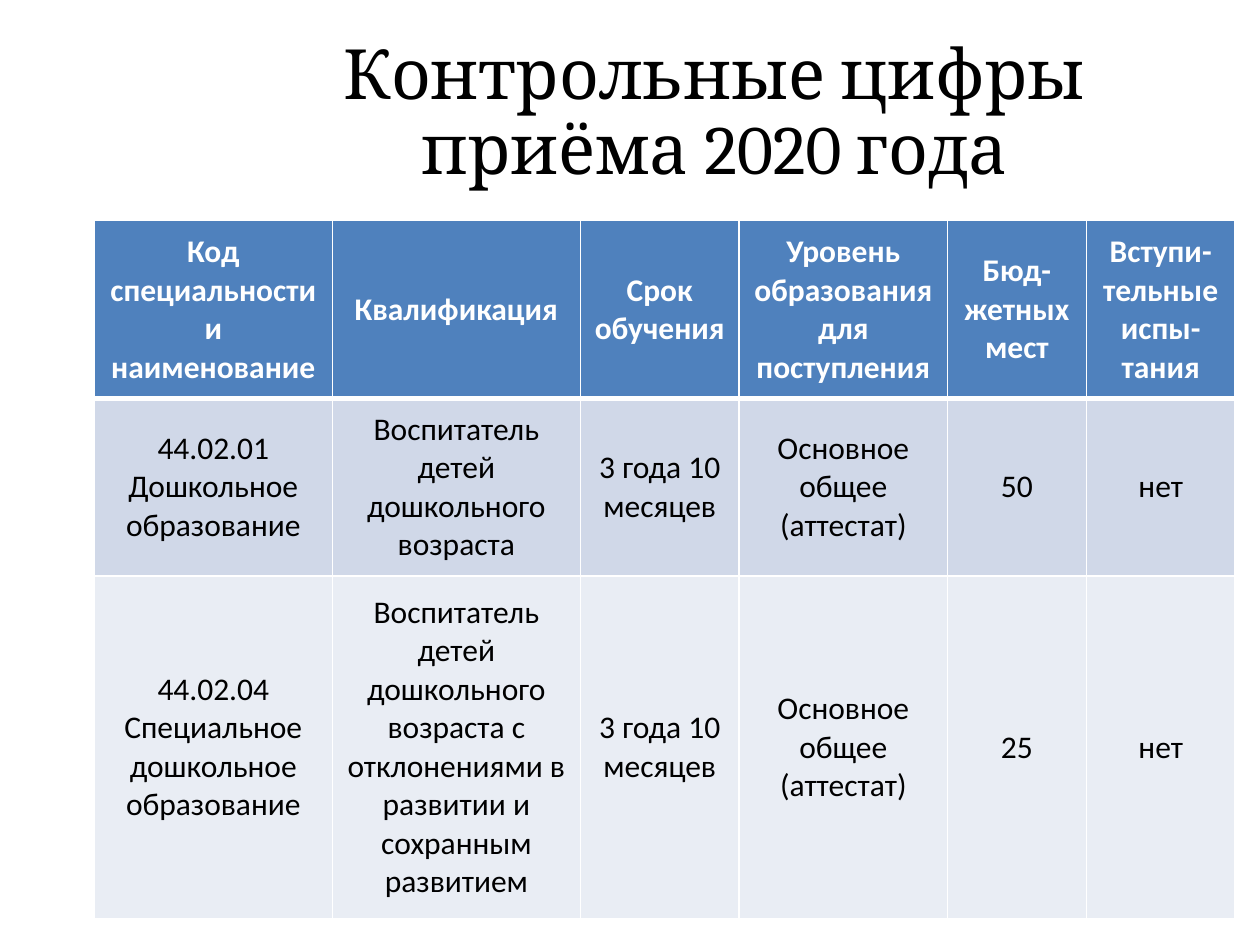
"""Build the slide with the 2020 admission figures table."""
from dataclasses import dataclass
from typing import NamedTuple

from lxml import etree
from pptx import Presentation, util as u
from pptx.dml import color
from pptx.enum import text
from pptx.oxml import ns


@dataclass(frozen=True)
class Theme:
    title_font: str = "Cambria"
    table_font: str = "Calibri"
    title_size: float = 39.6
    table_size: float = 18
    ink: str = "000000"
    paper: str = "FFFFFF"
    header_fill: str = "4F81BD"
    odd_fill: str = "D0D8E8"
    even_fill: str = "E9EDF4"
    thin_rule: float = 1
    thick_rule: float = 3


class Row(NamedTuple):
    height: float
    fill: str
    ink: str
    bold: bool
    top: float
    bottom: float
    texts: tuple[str, ...]


THEME = Theme()
TITLE = "Контрольные цифры приёма 2020 года"
COLUMN_WIDTHS = (4.8, 5, 3.2, 4.2, 2.8, 3)
ROWS = (
    Row(3.58, THEME.header_fill, THEME.paper, True, THEME.thin_rule, THEME.thick_rule, (
        "Код специальности и наименование", "Квалификация", "Срок обучения",
        "Уровень образования для поступления", "Бюд- жетных мест",
        "Вступи- тельные испы- тания")),
    Row(3.58, THEME.odd_fill, THEME.ink, False, THEME.thick_rule, THEME.thin_rule, (
        "44.02.01 Дошкольное образование", "Воспитатель детей дошкольного возраста",
        "3 года 10 месяцев", "Основное общее (аттестат)", "50", "нет")),
    Row(6.91, THEME.even_fill, THEME.ink, False, THEME.thin_rule, THEME.thin_rule, (
        "44.02.04 Специальное дошкольное образование",
        "Воспитатель детей дошкольного возраста с отклонениями в развитии "
        "и сохранным развитием",
        "3 года 10 месяцев", "Основное общее (аттестат)", "25", "нет")),
)


def format_paragraph(paragraph, font: str, size: float, ink: str, bold: bool = False) -> None:
    """Centre a paragraph and style its runs."""
    paragraph.alignment = text.PP_ALIGN.CENTER
    for run in paragraph.runs:
        run.font.name = font
        run.font.size = u.Pt(size)
        run.font.bold = bold
        run.font.color.rgb = color.RGBColor.from_string(ink)


def add_title(slide) -> None:
    """Place the slide title."""
    shape = slide.shapes.add_textbox(u.Cm(3.91), u.Cm(0.91), u.Cm(21), u.Cm(2.8))
    frame = shape.text_frame
    frame.word_wrap = True
    frame.vertical_anchor = text.MSO_ANCHOR.MIDDLE
    frame.text = TITLE
    paragraph = frame.paragraphs[0]
    paragraph.line_spacing = 0.9
    format_paragraph(paragraph, THEME.title_font, THEME.title_size, THEME.ink)


def add_borders(cell, row: Row) -> None:
    """Rule the four sides of a cell."""
    properties = cell._tc.get_or_add_tcPr()
    sides = {"L": THEME.thin_rule, "R": THEME.thin_rule, "T": row.top, "B": row.bottom}
    for side, width in sides.items():
        line = etree.SubElement(properties, ns.qn(f"a:ln{side}"), w=str(u.Pt(width)))
        fill = etree.SubElement(line, ns.qn("a:solidFill"))
        etree.SubElement(fill, ns.qn("a:srgbClr"), val=THEME.paper)


def fill_cell(cell, content: str, row: Row) -> None:
    """Write and style one table cell."""
    add_borders(cell, row)
    cell.fill.solid()
    cell.fill.fore_color.rgb = color.RGBColor.from_string(row.fill)
    cell.vertical_anchor = text.MSO_ANCHOR.MIDDLE
    cell.text_frame.text = content
    format_paragraph(cell.text_frame.paragraphs[0], THEME.table_font,
                     THEME.table_size, row.ink, row.bold)


def add_admission_table(slide) -> None:
    """Draw the table of specialities."""
    table = slide.shapes.add_table(
        len(ROWS), len(COLUMN_WIDTHS), u.Cm(1.9), u.Cm(4.45),
        u.Cm(sum(COLUMN_WIDTHS)), u.Cm(sum(row.height for row in ROWS))).table
    for column, width in zip(table.columns, COLUMN_WIDTHS):
        column.width = u.Cm(width)
    for table_row, row in zip(table.rows, ROWS):
        table_row.height = u.Cm(row.height)
        for cell, content in zip(table_row.cells, row.texts):
            fill_cell(cell, content, row)


def main() -> None:
    """Create and save the presentation."""
    presentation = Presentation()
    presentation.slide_width = u.Cm(25.4)
    presentation.slide_height = u.Cm(19.05)
    slide = presentation.slides.add_slide(presentation.slide_layouts[6])
    add_title(slide)
    add_admission_table(slide)
    presentation.save("out.pptx")


if __name__ == "__main__":
    main()
